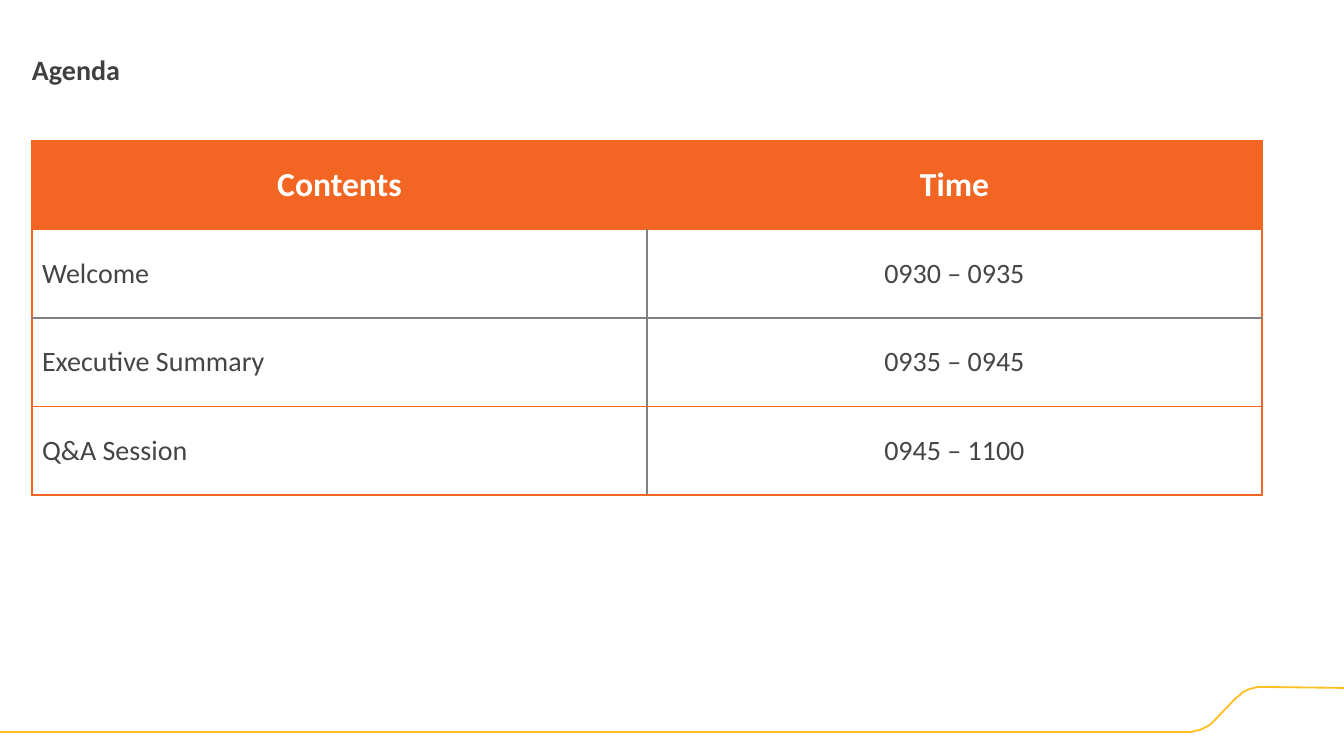
import pptx
import pptx.util
import pptx.dml.color
import pptx.enum.text
import pptx.oxml
import pptx.oxml.ns

ORANGE = pptx.dml.color.RGBColor(0xF2, 0x65, 0x22)
AMBER = pptx.dml.color.RGBColor(0xFF, 0xBF, 0x22)
GRAY = pptx.dml.color.RGBColor(0x80, 0x80, 0x80)
INK = pptx.dml.color.RGBColor(0x45, 0x45, 0x46)
TITLE_INK = pptx.dml.color.RGBColor(0x40, 0x40, 0x40)
WHITE = pptx.dml.color.RGBColor(0xFF, 0xFF, 0xFF)

LEFT = pptx.enum.text.PP_ALIGN.LEFT
CENTER = pptx.enum.text.PP_ALIGN.CENTER
MIDDLE = pptx.enum.text.MSO_ANCHOR.MIDDLE
EMU_PER_PX = 914400 / 100.8

AGENDA = [
    ("Contents", "Time"),
    ("Welcome", "0930 – 0935"),
    ("Executive Summary", "0935 – 0945"),
    ("Q&A Session", "0945 – 1100"),
]
FOOTER_CURVE = [
    (1346, 688), (1263, 687), (1258, 687), (1254, 688), (1250, 689),
    (1247, 690), (1243, 692), (1240, 695), (1236, 698), (1214, 721),
    (1211, 724), (1208, 726), (1204, 728), (1200, 730), (1195, 731),
    (1191, 732), (1187, 732), (0, 732),
]


def px(length):
    """Turn pixels into EMU."""
    return pptx.util.Emu(round(length * EMU_PER_PX))


class AgendaPage:
    """Holds the style and the current slide."""

    def __init__(self, deck, family="Calibri"):
        """Add a blank slide to the deck."""
        self.page = deck.slides.add_slide(deck.slide_layouts[6])
        self.family = family

    def add_line(self, frame, text, align=LEFT, **style):
        """Put one formatted line into a text frame."""
        para = frame.paragraphs[0]
        para.alignment = align
        span = para.add_run()
        span.text = text
        span.font.color.rgb = style.pop("color")
        style["size"] = pptx.util.Pt(style["size"])
        for name, value in {"name": self.family, **style}.items():
            setattr(span.font, name, value)

    def text(self, left, top, width, height, text, **style):
        """Add a text box without margins."""
        box = self.page.shapes.add_textbox(px(left), px(top), px(width), px(height))
        frame = box.text_frame
        layout = {"word_wrap": True, "margin_left": 0, "margin_right": 0,
                  "margin_top": 0, "margin_bottom": 0}
        for name, value in layout.items():
            setattr(frame, name, value)
        self.add_line(frame, text, **style)

    def curve(self, points, color, weight):
        """Draw an open line through the points."""
        builder = self.page.shapes.build_freeform(*points[0], scale=EMU_PER_PX)
        builder.add_line_segments(points[1:], close=False)
        shape = builder.convert_to_shape()
        shape.shadow.inherit = False
        shape.fill.background()
        shape.line.color.rgb = color
        shape.line.width = pptx.util.Pt(weight)

    def borders(self, cell, **colors):
        """Set one-point borders on the four sides of a cell."""
        properties = cell._tc.get_or_add_tcPr()
        for position, side in enumerate("LRTB"):
            line = pptx.oxml.parse_xml(
                f'<a:ln{side} {pptx.oxml.ns.nsdecls("a")} w="12700"><a:solidFill>'
                f'<a:srgbClr val="{colors[side]}"/></a:solidFill></a:ln{side}>')
            properties.insert(position, line)

    def table(self, left, top, width, height, rows):
        """Add the agenda table with equal rows and columns."""
        last_column = len(rows[0]) - 1
        table = self.page.shapes.add_table(
            len(rows), len(rows[0]), px(left), px(top), px(width), px(height)).table
        for r, row in enumerate(rows):
            for c, text in enumerate(row):
                cell = table.cell(r, c)
                cell.vertical_anchor = MIDDLE
                header = r == 0
                if header:
                    cell.fill.solid()
                    cell.fill.fore_color.rgb = ORANGE
                else:
                    cell.fill.background()
                self.add_line(cell.text_frame, text,
                              align=CENTER if header or c else LEFT,
                              size=24 if header else 20, bold=header,
                              color=WHITE if header else INK)
                self.borders(cell,
                             L=GRAY if c and not header else ORANGE,
                             R=GRAY if c < last_column and not header else ORANGE,
                             T=GRAY if r == 2 else ORANGE,
                             B=GRAY if r == 1 else ORANGE)


def main():
    """Build the agenda slide."""
    deck = pptx.Presentation()
    deck.slide_width, deck.slide_height = px(1344), px(756)
    agenda = AgendaPage(deck)
    agenda.curve(FOOTER_CURVE, AMBER, 1.29)
    agenda.table(32, 141, 1230, 354, AGENDA)
    agenda.text(32, 53, 1196, 28, "Agenda", size=20, bold=True, color=TITLE_INK)
    deck.save("out.pptx")


if __name__ == "__main__":
    main()
